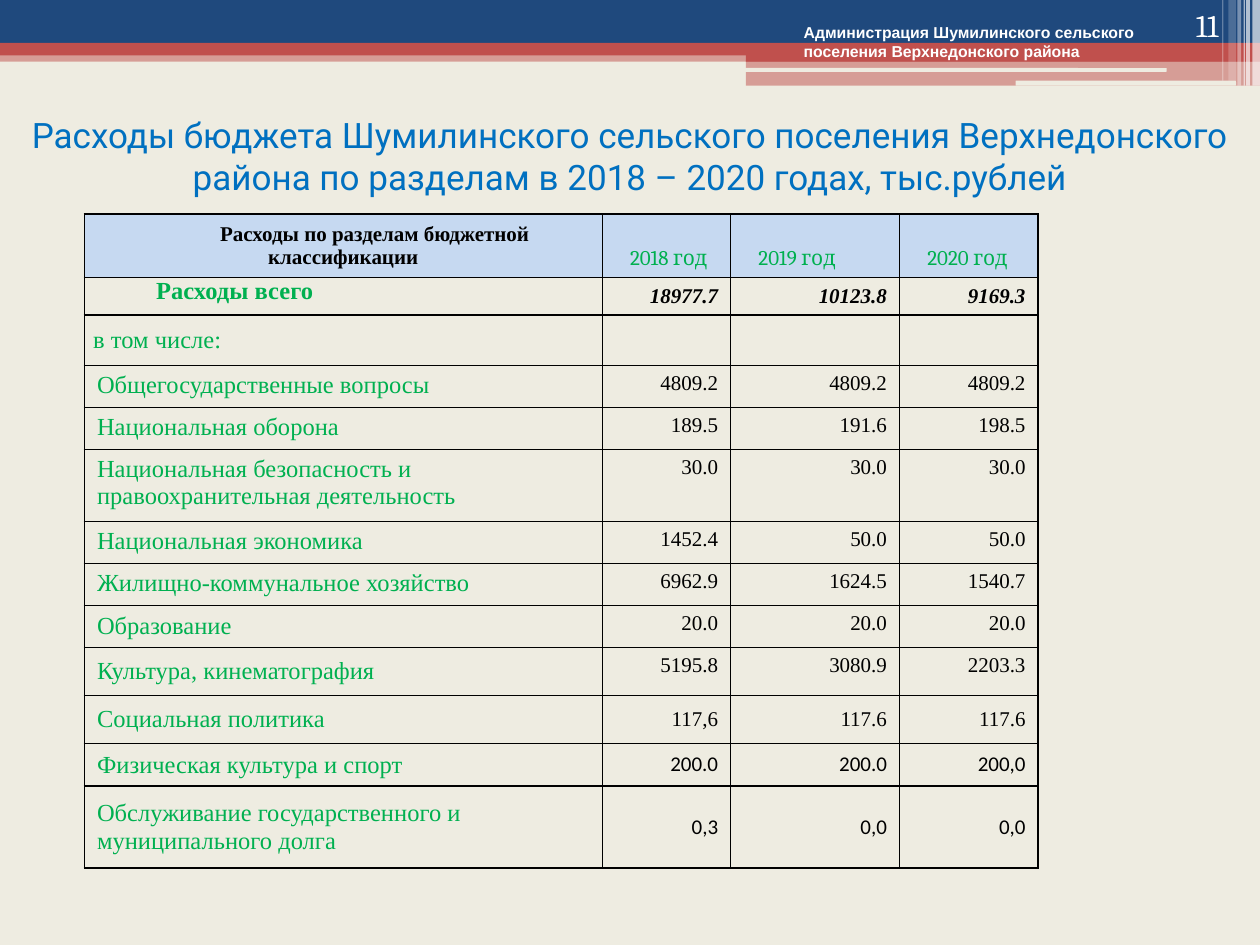
from lxml.etree import SubElement
from pptx import Presentation
from pptx.dml.color import RGBColor
from pptx.enum.shapes import MSO_SHAPE
from pptx.enum.text import MSO_ANCHOR, PP_ALIGN
from pptx.oxml.ns import qn
from pptx.util import Inches, Pt

CREAM = RGBColor(0xEE, 0xEC, 0xE1)
NAVY = RGBColor(0x1F, 0x49, 0x7D)
RED = RGBColor(0xC0, 0x50, 0x4D)
WHITE = RGBColor(0xFF, 0xFF, 0xFF)
BLACK = RGBColor(0, 0, 0)
BLUE = RGBColor(0x00, 0x70, 0xC0)
GREEN = RGBColor(0x00, 0xB0, 0x50)
PALE_BLUE = RGBColor(0xC6, 0xD9, 0xF1)

TOP, MIDDLE, BOTTOM = MSO_ANCHOR.TOP, MSO_ANCHOR.MIDDLE, MSO_ANCHOR.BOTTOM
SERIF = "Times New Roman"


def write(frame, text, color, align=PP_ALIGN.LEFT, **font):
    """Put one formatted run into the frame and return its paragraph."""
    para = frame.paragraphs[0]
    para.alignment = align
    span = para.add_run()
    span.text = text
    span.font.color.rgb = color
    for name, value in font.items():
        setattr(span.font, name, value)
    return para


def draw_borders(cell):
    properties = cell._tc.get_or_add_tcPr()
    for index, side in enumerate(("a:lnL", "a:lnR", "a:lnT", "a:lnB")):
        line = properties.makeelement(qn(side), {"w": str(Pt(1))})
        fill = SubElement(line, qn("a:solidFill"))
        SubElement(fill, qn("a:srgbClr"), val=str(BLACK))
        properties.insert(index, line)


deck = Presentation()
deck.slide_width, deck.slide_height = Inches(10), Inches(7.5)
page = deck.slides.add_slide(deck.slide_layouts[5])
page.background.fill.solid()
page.background.fill.fore_color.rgb = CREAM

# Header bands: left, top, width, height, colour, opacity in percent
RECT, ROUND = MSO_SHAPE.RECTANGLE, MSO_SHAPE.ROUNDED_RECTANGLE
bands = [
    (RECT, 0, 0.4, 10, 0.09, RED, 50),
    (RECT, 0, 0, 10, 0.34, NAVY, 100),
    (RECT, 0, 0.34, 10, 0.1, RED, 100),
    (RECT, 5.92, 0.39, 4.08, 0.1, RED, 100),
    (RECT, 5.92, 0.48, 4.08, 0.2, RED, 50),
    (ROUND, 5.91, 0.54, 3.35, 0.03, CREAM, 100),
    (ROUND, 8.06, 0.64, 1.75, 0.04, CREAM, 100),
    (RECT, 9.94, 0, 0.06, 0.68, WHITE, 65),
    (RECT, 9.89, 0, 0.03, 0.68, WHITE, 65),
    (RECT, 9.87, 0, 0.01, 0.68, WHITE, 60),
    (RECT, 9.82, 0, 0.03, 0.68, WHITE, 40),
    (RECT, 9.75, 0, 0.06, 0.64, WHITE, 20),
    (RECT, 9.7, 0, 0.01, 0.64, WHITE, 30),
]
for kind, left, top, width, height, color, opacity in bands:
    band = page.shapes.add_shape(kind, Inches(left), Inches(top), Inches(width), Inches(height))
    band.shadow.inherit = False
    band.line.fill.background()
    band.fill.solid()
    band.fill.fore_color.rgb = color
    if opacity < 100:
        tint = band.fill._xPr.find(qn("a:solidFill"))[0]
        SubElement(tint, qn("a:alpha"), val=str(opacity * 1000))

# Title, moved above the bands in drawing order
title = page.shapes.title
title.left, title.top, title.width, title.height = Inches(0), Inches(0.84), Inches(10), Inches(0.79)
title.text_frame.vertical_anchor = MIDDLE
title.text_frame.word_wrap = True
write(title.text_frame,
      "Расходы бюджета Шумилинского сельского поселения Верхнедонского района "
      "по разделам в 2018 – 2020 годах, тыс.рублей",
      BLUE, PP_ALIGN.CENTER, size=Pt(20), name="Roboto")
page.shapes._spTree.append(title._element)

# Page number and the name of the administration
captions = [
    (8.94, 0, 0.83, "11", BOTTOM, PP_ALIGN.RIGHT, {"size": Pt(18), "name": "Cambria"}),
    (6.28, 0.13, 3.11, "Администрация Шумилинского сельского поселения Верхнедонского района",
     TOP, PP_ALIGN.LEFT, {"size": Pt(9), "name": "Arial", "bold": True}),
]
for left, top, width, text, anchor, align, font in captions:
    box = page.shapes.add_textbox(Inches(left), Inches(top), Inches(width), Inches(0.4))
    box.text_frame.word_wrap = True
    box.text_frame.vertical_anchor = anchor
    write(box.text_frame, text, WHITE, align, **font)

# Expenses: row height, label, values, anchor of label, anchor of values
HEADINGS = ["Расходы по разделам бюджетной классификации", "2018 год", "2019 год", "2020 год"]
expenses = [
    (0.3, "Расходы всего", ["18977.7", "10123.8", "9169.3"], TOP, MIDDLE),
    (0.4, "в том числе:", ["", "", ""], MIDDLE, TOP),
    (0.33, "Общегосударственные вопросы", ["4809.2", "4809.2", "4809.2"], TOP, TOP),
    (0.33, "Национальная оборона", ["189.5", "191.6", "198.5"], TOP, TOP),
    (0.57, "Национальная безопасность и правоохранительная деятельность",
     ["30.0", "30.0", "30.0"], TOP, TOP),
    (0.33, "Национальная экономика", ["1452.4", "50.0", "50.0"], TOP, TOP),
    (0.33, "Жилищно-коммунальное хозяйство", ["6962.9", "1624.5", "1540.7"], TOP, TOP),
    (0.33, "Образование", ["20.0", "20.0", "20.0"], MIDDLE, TOP),
    (0.38, "Культура, кинематография", ["5195.8", "3080.9", "2203.3"], MIDDLE, TOP),
    (0.38, "Социальная политика", ["117,6", "117.6", "117.6"], MIDDLE, MIDDLE),
    (0.34, "Физическая культура и спорт", ["200.0", "200.0", "200,0"], MIDDLE, MIDDLE),
    (0.65, "Обслуживание государственного и муниципального долга",
     ["0,3", "0,0", "0,0"], MIDDLE, MIDDLE),
]
TOTAL, INCLUDING = 1, 2
FIRST_CALIBRI, LAST = len(expenses) - 1, len(expenses)

table = page.shapes.add_table(len(expenses) + 1, len(HEADINGS), Inches(0.67), Inches(1.7),
                              Inches(7.57), Inches(5.18)).table
table.first_row = table.horz_banding = False
for column, width in zip(table.columns, (4.11, 1.02, 1.34, 1.1)):
    column.width = Inches(width)
for row, height in zip(table.rows, [0.5] + [expense[0] for expense in expenses]):
    row.height = Inches(height)
for cell in table.iter_cells():
    cell.fill.background()
    draw_borders(cell)

for column, heading in enumerate(HEADINGS):
    cell = table.cell(0, column)
    cell.fill.solid()
    cell.fill.fore_color.rgb = PALE_BLUE
    if column == 0:
        cell.vertical_anchor = MIDDLE
        para = write(cell.text_frame, heading, BLACK, PP_ALIGN.CENTER,
                     size=Pt(12), name=SERIF, bold=True)
        para._p.get_or_add_pPr().set("indent", str(Inches(0.5)))
    else:
        cell.vertical_anchor = BOTTOM
        para = write(cell.text_frame, heading, GREEN, size=Pt(12), name="Cambria", bold=False)
        para.space_before = Pt(3)
        para._p.get_or_add_pPr().set("marL", str(Inches(0.12)))

for row, (_, label, values, label_anchor, value_anchor) in enumerate(expenses, start=1):
    is_total = row == TOTAL
    cell = table.cell(row, 0)
    cell.vertical_anchor = label_anchor
    para = write(cell.text_frame, label, GREEN, size=Pt(14), name=SERIF, bold=is_total)
    if is_total:
        para._p.get_or_add_pPr().set("indent", str(Inches(0.5)))
    if row in (TOTAL, INCLUDING):
        cell.margin_left = cell.margin_right = Inches(0.07)
        cell.margin_top = cell.margin_bottom = 0
    if row in (INCLUDING, LAST):
        para.space_after = Pt(6)

    value_font = "Calibri" if row >= FIRST_CALIBRI else SERIF
    for column, value in enumerate(values, start=1):
        if value:
            cell = table.cell(row, column)
            cell.vertical_anchor = value_anchor
            write(cell.text_frame, value, BLACK, PP_ALIGN.RIGHT, size=Pt(12),
                  name=value_font, bold=is_total, italic=is_total)

deck.save("out.pptx")
